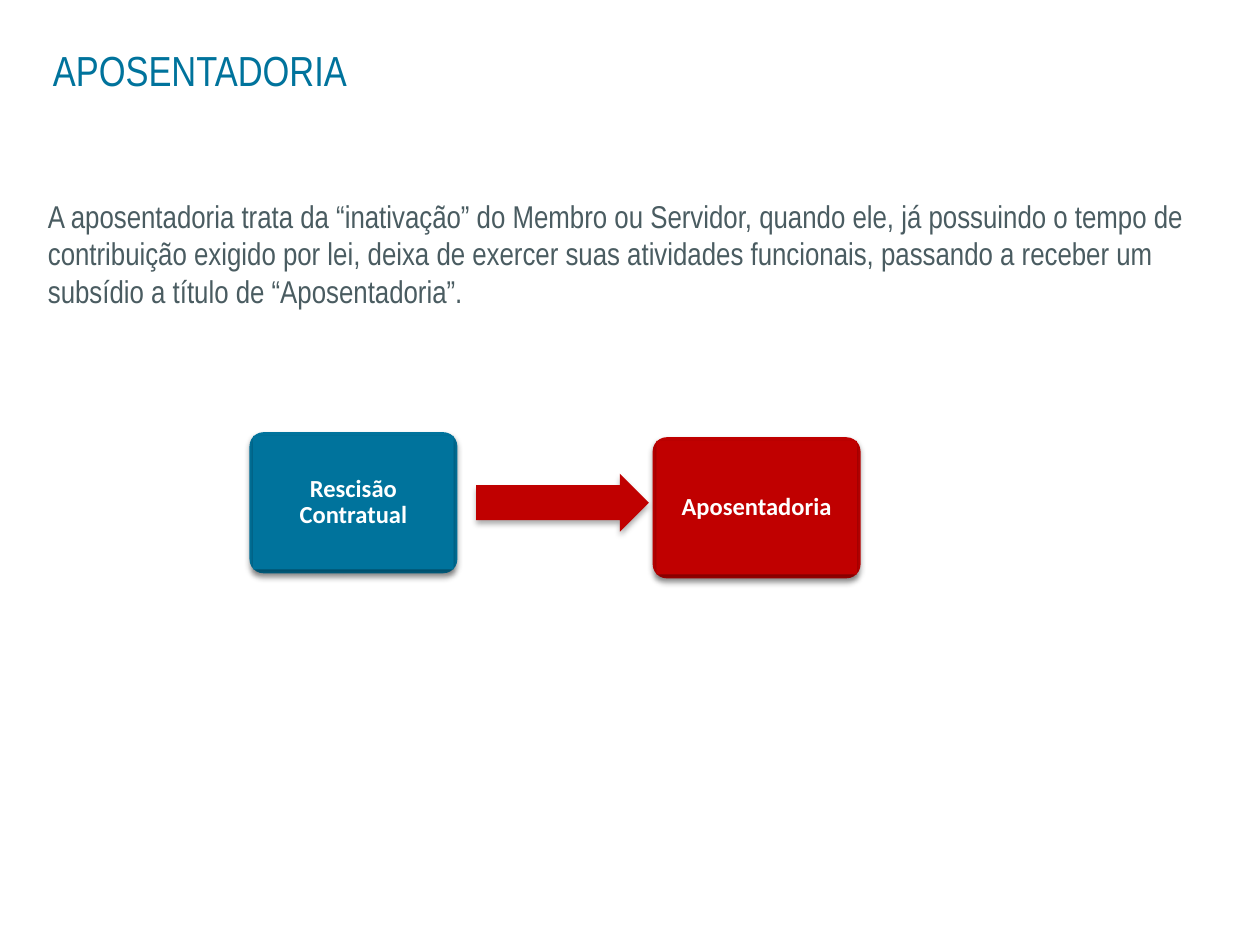
from lxml import etree
from pptx import Presentation
from pptx.dml.color import RGBColor
from pptx.enum import shapes, text
from pptx.oxml.ns import qn
from pptx.util import Inches, Pt

BLUE = RGBColor(0x00, 0x73, 0x9C)
RED = RGBColor(0xC0, 0x00, 0x00)
GRAY = RGBColor(0x4A, 0x5C, 0x61)
WHITE = RGBColor(0xFF, 0xFF, 0xFF)

TITLE = "APOSENTADORIA"
DEFINITION = (
    "A aposentadoria trata da “inativação” do Membro ou Servidor, quando ele, "
    "já possuindo o tempo de contribuição exigido por lei, deixa de exercer suas "
    "atividades funcionais, passando a receber um subsídio a título de “Aposentadoria”."
)
STEPS = [  # label, colour, left, top
    ("Rescisão Contratual", BLUE, 1.98, 3.43),
    ("Aposentadoria", RED, 5.18, 3.47),
]
STEP_W, STEP_H = 1.65, 1.12
LABEL_INSET = 0.03
ARROW_BOX = (3.78, 3.76, 1.37, 0.46)


def place(part, left, top, width, height):
    part.left, part.top = Inches(left), Inches(top)
    part.width, part.height = Inches(width), Inches(height)


def set_margins(frame, horizontal, vertical):
    frame.margin_left = frame.margin_right = Inches(horizontal)
    frame.margin_top = frame.margin_bottom = Inches(vertical)


def write(paragraph, wording, font_name, size, color, bold=False):
    run = paragraph.add_run()
    run.text = wording
    run.font.name, run.font.size = font_name, Pt(size)
    run.font.color.rgb, run.font.bold = color, bold


def add_block(slide, preset, box, color, adjustments=()):
    """Add a filled shape without outline, with a soft shadow below it."""
    block = slide.shapes.add_shape(preset, *map(Inches, box))
    for i, value in enumerate(adjustments):
        block.adjustments[i] = value
    block.fill.solid()
    block.fill.fore_color.rgb = color
    block.line.fill.background()
    block.shadow.inherit = False
    effects = block.element.spPr.find(qn("a:effectLst"))
    shadow = etree.SubElement(effects, qn("a:outerShdw"), blurRad=str(Pt(3.5)),
                              dist=str(Pt(2.2)), dir="5400000", rotWithShape="0")
    shade = etree.SubElement(shadow, qn("a:srgbClr"), val="000000")
    etree.SubElement(shade, qn("a:alpha"), val="32000")
    return block


def add_step(slide, label, color, left, top):
    add_block(slide, shapes.MSO_SHAPE.ROUNDED_RECTANGLE,
              (left, top, STEP_W, STEP_H), color, [0.1])
    inner = add_block(slide, shapes.MSO_SHAPE.RECTANGLE,
                      (left + LABEL_INSET, top + LABEL_INSET,
                       STEP_W - 2 * LABEL_INSET, STEP_H - 2 * LABEL_INSET), color)
    frame = inner.text_frame
    frame.word_wrap = True
    frame.vertical_anchor = text.MSO_ANCHOR.MIDDLE
    set_margins(frame, 0.06, 0.06)
    paragraph = frame.paragraphs[0]
    paragraph.alignment = text.PP_ALIGN.CENTER
    paragraph.line_spacing = 0.9
    write(paragraph, label, "Calibri", 14, WHITE, bold=True)


def main():
    deck = Presentation()
    deck.slide_width, deck.slide_height = Inches(10), Inches(7.5)
    slide = deck.slides.add_slide(deck.slide_layouts[1])

    title, body = slide.shapes.title, slide.placeholders[1]
    place(title, 0.32, 0.3, 9.03, 0.66)
    place(body, 0.32, 1.53, 9.26, 3.08)
    set_margins(body.text_frame, 0.06, 0.03)
    for part, wording, size, color in ((title, TITLE, 24, BLUE),
                                       (body, DEFINITION, 18, GRAY)):
        frame = part.text_frame
        frame.word_wrap = True
        frame.auto_size = text.MSO_AUTO_SIZE.NONE
        frame.vertical_anchor = text.MSO_ANCHOR.TOP
        paragraph = frame.paragraphs[0]
        paragraph.alignment = text.PP_ALIGN.LEFT
        paragraph.space_before = Pt(0)
        properties = paragraph._p.get_or_add_pPr()
        properties.set("marL", "0")
        properties.set("indent", "0")
        etree.SubElement(properties, qn("a:buNone"))
        write(paragraph, wording, "Arial Narrow", size, color)

    for step in STEPS:
        add_step(slide, *step)
    add_block(slide, shapes.MSO_SHAPE.RIGHT_ARROW, ARROW_BOX, RED, [0.6, 0.5])

    deck.save("out.pptx")


if __name__ == "__main__":
    main()
